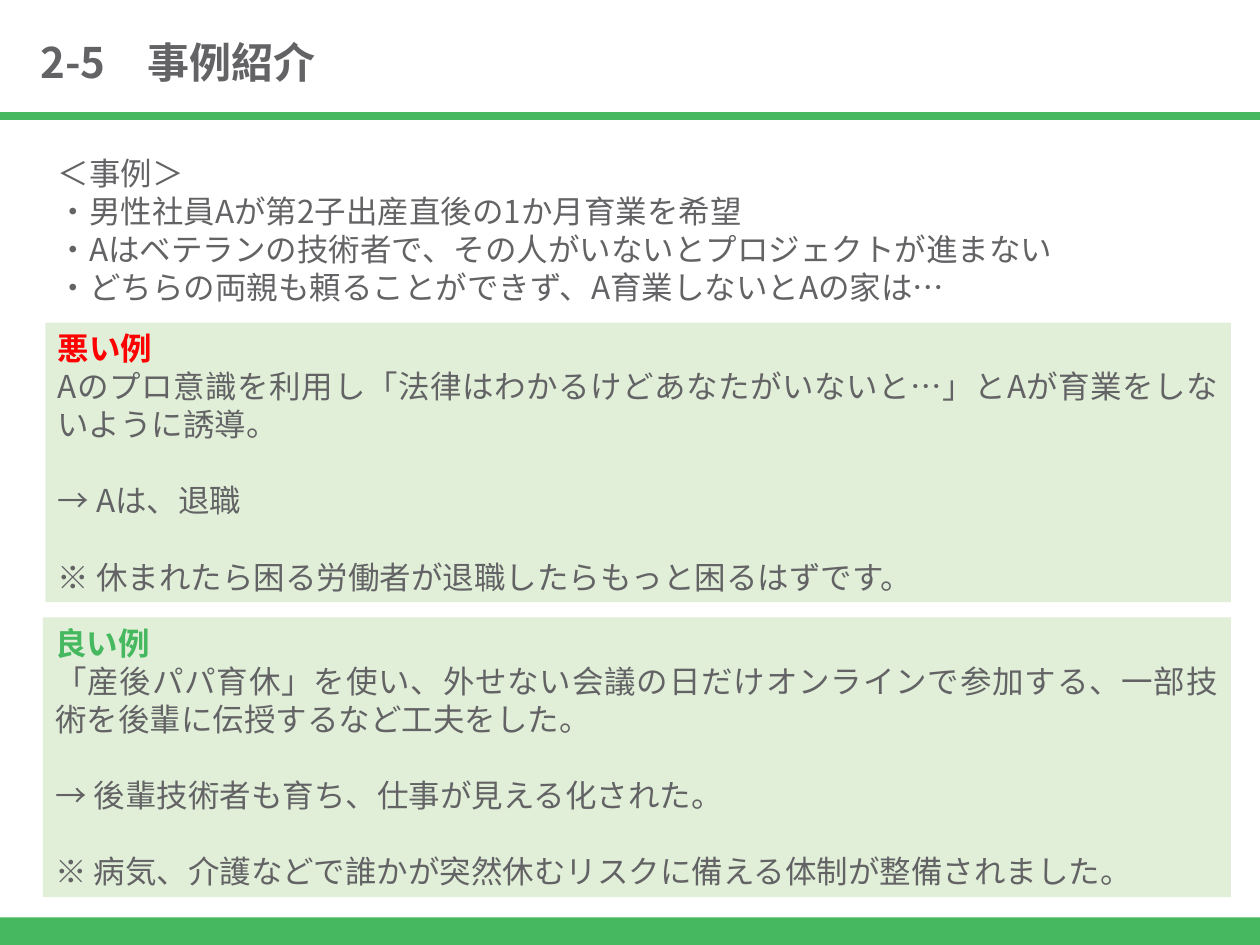
"""Build the case study slide on childcare leave."""
import dataclasses

import pptx
import pptx.dml.color
import pptx.enum.shapes
import pptx.enum.text
import pptx.oxml.ns
import pptx.util

Inches = pptx.util.Inches
Pt = pptx.util.Pt
Color = pptx.dml.color.RGBColor.from_string
Align = pptx.enum.text.PP_ALIGN


@dataclasses.dataclass(frozen=True)
class Theme:
    """Colours, typeface and type sizes."""

    green: str = "46B85F"
    pale_green: str = "E1EFD8"
    grey: str = "636366"
    red: str = "FF0000"
    font: str = "Noto Sans CJK JP"
    title_size: int = 24
    body_size: int = 18
    leading: float = 1.21


class SlideBuilder:
    """Hold the theme and the current slide."""

    def __init__(self, presentation, theme):
        self.theme = theme
        self.slide = presentation.slides.add_slide(presentation.slide_layouts[5])

    def set_frame(self, frame):
        """Give a text frame its wrapping, anchor and insets."""
        values = {
            "word_wrap": True,
            "auto_size": pptx.enum.text.MSO_AUTO_SIZE.NONE,
            "vertical_anchor": pptx.enum.text.MSO_ANCHOR.TOP,
            "margin_left": Inches(0.1),
            "margin_right": Inches(0.1),
            "margin_top": Inches(0.05),
            "margin_bottom": Inches(0.05),
        }
        for name, value in values.items():
            setattr(frame, name, value)

    def fill_paragraph(self, paragraph, text, size, color, bold=False,
                       align=Align.JUSTIFY, gap=0):
        """Fill one formatted paragraph, with a gap counted in lines above it."""
        line_height = size * self.theme.leading
        values = {
            "alignment": align,
            "line_spacing": Pt(line_height),
            "space_before": Pt(gap * line_height),
            "space_after": Pt(0),
        }
        for name, value in values.items():
            setattr(paragraph, name, value)
        run = paragraph.add_run()
        run.text = text
        for name, value in {"name": self.theme.font, "size": Pt(size), "bold": bold}.items():
            setattr(run.font, name, value)
        run.font.color.rgb = Color(color)
        latin = run.font._element.find(pptx.oxml.ns.qn("a:latin"))
        latin.addnext(latin.makeelement(
            pptx.oxml.ns.qn("a:ea"), {"typeface": self.theme.font}))

    def add_title(self, text, *box):
        """Place and fill the title."""
        title = self.slide.shapes.title
        for name, value in zip(("left", "top", "width", "height"), box):
            setattr(title, name, Inches(value))
        self.set_frame(title.text_frame)
        self.fill_paragraph(title.text_frame.paragraphs[0], text, self.theme.title_size,
                            self.theme.grey, bold=True, align=Align.LEFT)

    def add_rectangle(self, color, *box):
        """Add a plain filled rectangle."""
        shape = self.slide.shapes.add_shape(
            pptx.enum.shapes.MSO_SHAPE.RECTANGLE, *map(Inches, box))
        shape.shadow.inherit = False
        shape.fill.solid()
        shape.fill.fore_color.rgb = Color(color)
        shape.line.fill.background()
        return shape

    def add_rule(self, top, width, weight):
        """Add a horizontal green rule from the left edge."""
        rule = self.slide.shapes.add_connector(
            pptx.enum.shapes.MSO_CONNECTOR.STRAIGHT,
            Inches(0), Inches(top), Inches(width), Inches(top))
        rule.line.color.rgb = Color(self.theme.green)
        rule.line.width = Pt(weight)
        properties = rule._element.spPr
        properties.append(properties.makeelement(pptx.oxml.ns.qn("a:effectLst")))

    def add_text(self, lines, *box):
        """Add a text box with one paragraph per line."""
        frame = self.slide.shapes.add_textbox(*map(Inches, box)).text_frame
        self.set_frame(frame)
        for index, line in enumerate(lines):
            paragraph = frame.add_paragraph() if index else frame.paragraphs[0]
            self.fill_paragraph(paragraph, line, self.theme.body_size, self.theme.grey)

    def add_example(self, heading, color, story, notes, *box):
        """Add a panel with a coloured heading, a story and spaced notes."""
        frame = self.add_rectangle(self.theme.pale_green, *box).text_frame
        self.set_frame(frame)
        size = self.theme.body_size
        self.fill_paragraph(frame.paragraphs[0], heading, size, color, bold=True)
        self.fill_paragraph(frame.add_paragraph(), story, size, self.theme.grey)
        for note in notes:
            self.fill_paragraph(frame.add_paragraph(), note, size, self.theme.grey, gap=1)


def main():
    """Build and save the slide."""
    presentation = pptx.Presentation()
    presentation.slide_width = Inches(10)
    presentation.slide_height = Inches(7.5)
    theme = Theme()
    builder = SlideBuilder(presentation, theme)
    builder.add_rectangle(theme.green, -0.01, 7.28, 10.04, 0.25)
    builder.add_rule(0.92, 10, 4.5)
    builder.add_example(
        "悪い例", theme.red,
        "Aのプロ意識を利用し「法律はわかるけどあなたがいないと…」とAが育業をしないように誘導。",
        ("→ Aは、退職", "※ 休まれたら困る労働者が退職したらもっと困るはずです。"),
        0.36, 2.56, 9.41, 2.22)
    builder.add_example(
        "良い例", theme.green,
        "「産後パパ育休」を使い、外せない会議の日だけオンラインで参加する、一部技術を後輩に伝授するなど工夫をした。",
        ("→ 後輩技術者も育ち、仕事が見える化された。",
         "※ 病気、介護などで誰かが突然休むリスクに備える体制が整備されました。"),
        0.34, 4.9, 9.43, 2.22)
    builder.add_title("2-5　事例紹介", 0.22, 0.24, 8.04, 0.5)
    builder.add_text(
        ("＜事例＞",
         "・男性社員Aが第2子出産直後の1か月育業を希望",
         "・Aはベテランの技術者で、その人がいないとプロジェクトが進まない",
         "・どちらの両親も頼ることができず、A育業しないとAの家は…"),
        0.36, 1.17, 9.32, 1.31)
    presentation.save("out.pptx")


if __name__ == "__main__":
    main()
